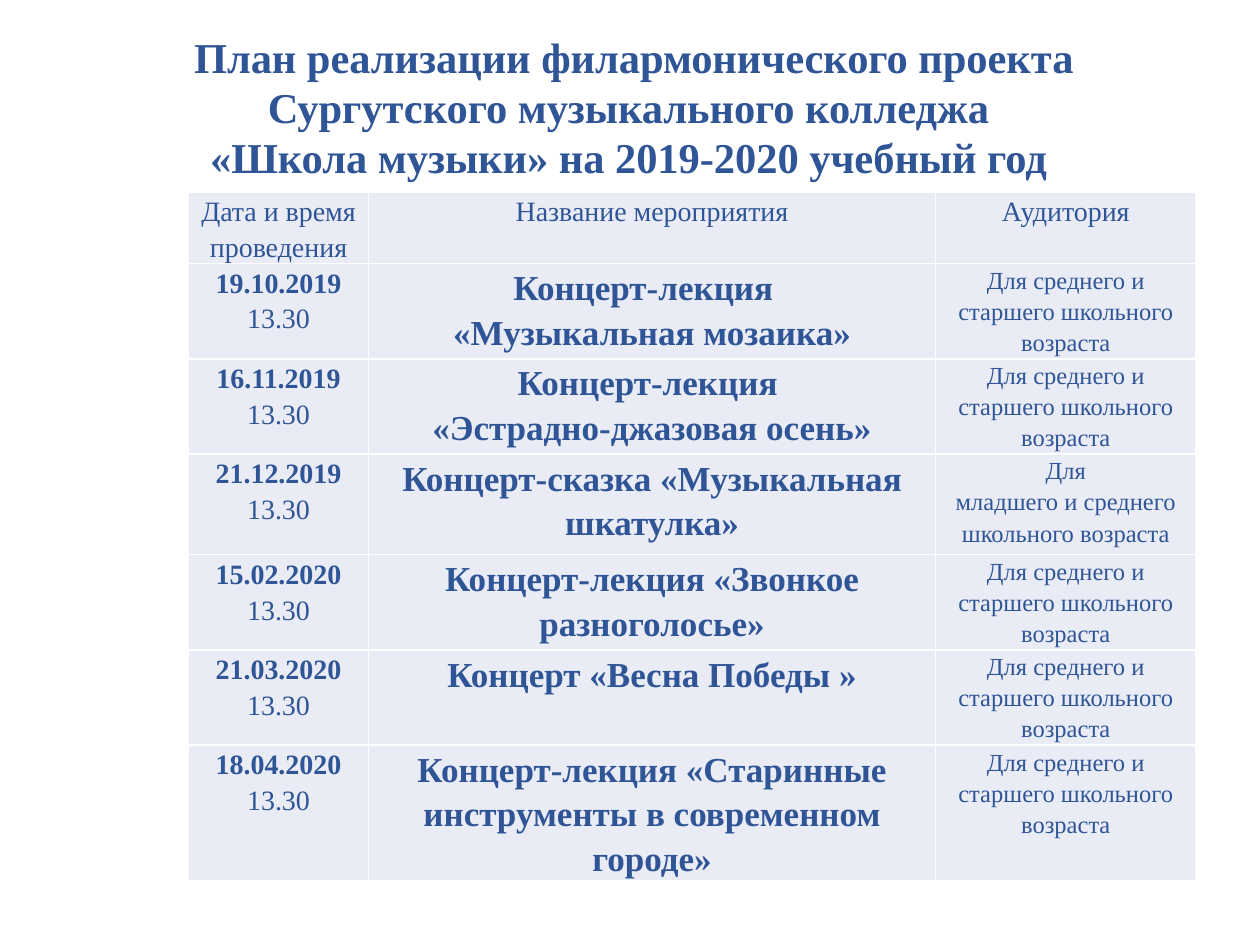
import pptx
import pptx.dml.color
import pptx.enum.text
import pptx.oxml
import pptx.oxml.ns
import pptx.util

Cm, Pt = pptx.util.Cm, pptx.util.Pt
RGB = pptx.dml.color.RGBColor
CENTER = pptx.enum.text.PP_ALIGN.CENTER
MIDDLE = pptx.enum.text.MSO_ANCHOR.MIDDLE
COLORS = {"text": "2F5597", "cell": "E9EBF5", "border": "FFFFFF"}


def format_paragraph(p, size, bold, spacing):
    for name, value in {"alignment": CENTER, "line_spacing": spacing, "space_before": Pt(0)}.items():
        setattr(p, name, value)
    for r in p.runs:
        for name, value in {"name": "Times New Roman", "size": Pt(size), "bold": bold}.items():
            setattr(r.font, name, value)
        r.font.color.rgb = RGB.from_string(COLORS["text"])


def add_borders(cell):
    for side in ("lnL", "lnR", "lnT", "lnB"):
        cell._tc.get_or_add_tcPr().append(pptx.oxml.parse_xml(
            f'<a:{side} {pptx.oxml.ns.nsdecls("a")} w="12700"><a:solidFill>'
            f'<a:srgbClr val="{COLORS["border"]}"/></a:solidFill></a:{side}>'))


prs = pptx.Presentation()
prs.slide_width, prs.slide_height = Cm(25.4), Cm(19.05)
s = prs.slides.add_slide(prs.slide_layouts[5])

title = s.shapes.title
for name, value in {"left": 1.83, "top": 0.76, "width": 21.9, "height": 2.85}.items():
    setattr(title, name, Cm(value))
tf = title.text_frame
for name, value in {"word_wrap": True, "vertical_anchor": MIDDLE, "margin_top": 0, "margin_bottom": 0}.items():
    setattr(tf, name, value)
tf.text = ("План реализации филармонического проекта Сургутского музыкального колледжа \v"
           "«Школа музыки» на 2019-2020 учебный год ")
format_paragraph(tf.paragraphs[0], 24.3, True, 0.98)

SCHOOL = "Для среднего и старшего школьного возраста"
YOUNGER = "Для\nмладшего и среднего школьного возраста"
rows = [
    ("Дата и время проведения", "Название мероприятия", "Аудитория"),
    ("19.10.2019\n13.30", "Концерт-лекция  \n«Музыкальная мозаика»", SCHOOL),
    ("16.11.2019\n13.30", "Концерт-лекция \n«Эстрадно-джазовая осень»", SCHOOL),
    ("21.12.2019\n13.30", "Концерт-сказка «Музыкальная шкатулка»", YOUNGER),
    ("15.02.2020\n13.30", "Концерт-лекция «Звонкое разноголосье»", SCHOOL),
    ("21.03.2020\n13.30", "Концерт «Весна Победы »", SCHOOL),
    ("18.04.2020\n13.30", "Концерт-лекция «Старинные инструменты в современном городе»", SCHOOL),
]
widths = [3.63, 11.43, 5.25]
heights = [1.44, 1.92, 1.92, 2.03, 1.92, 1.92, 2.74]
sizes = [16, 20, 14]

table = s.shapes.add_table(len(rows), len(widths), Cm(3.8), Cm(3.87),
                           Cm(sum(widths)), Cm(sum(heights))).table
table.first_row = table.horz_banding = False
for column, width in zip(table.columns, widths):
    column.width = Cm(width)
for row, height in zip(table.rows, heights):
    row.height = Cm(height)

for i, texts in enumerate(rows):
    for j, text in enumerate(texts):
        cell = table.cell(i, j)
        margins = {"margin_left": 0.18, "margin_right": 0.18, "margin_top": 0, "margin_bottom": 0}
        for name, value in margins.items():
            setattr(cell, name, Cm(value))
        add_borders(cell)
        cell.fill.solid()
        cell.fill.fore_color.rgb = RGB.from_string(COLORS["cell"])
        cell.text = text
        for k, p in enumerate(cell.text_frame.paragraphs):
            bold = i > 0 and (j == 1 or (j == 0 and k == 0))
            format_paragraph(p, sizes[j] if i else 16, bold, 1.15)

prs.save("out.pptx")
